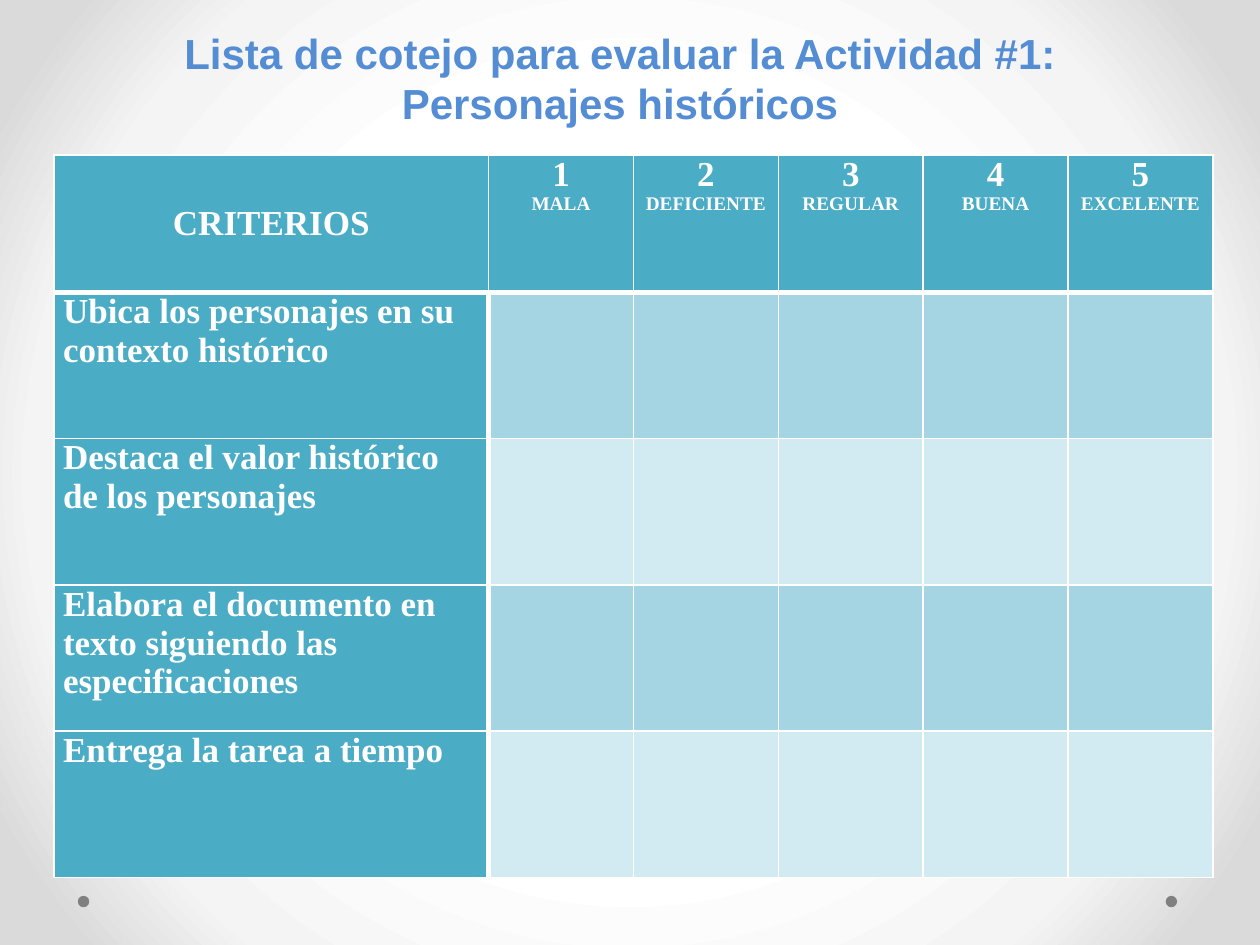
import pptx
import pptx.util
import pptx.dml.color
import pptx.enum.shapes
import pptx.enum.text
import pptx.oxml
import pptx.oxml.ns
from lxml import etree

Cm = pptx.util.Cm
RGBColor = pptx.dml.color.RGBColor
Align = pptx.enum.text.PP_ALIGN
Anchor = pptx.enum.text.MSO_ANCHOR
qn = pptx.oxml.ns.qn

HEADING = "Lista de cotejo para evaluar la Actividad #1: Personajes históricos"
CRITERIA_LABEL = "CRITERIOS"
RATINGS = ["MALA", "DEFICIENTE", "REGULAR", "BUENA", "EXCELENTE"]
CRITERIA = [
    "Ubica los personajes en su contexto histórico",
    "Destaca el valor histórico de los personajes",
    "Elabora el documento en texto siguiendo las especificaciones",
    "Entrega la tarea a tiempo",
]

WHITE = RGBColor(0xFF, 0xFF, 0xFF)
HEADING_BLUE = RGBColor(0x54, 0x8D, 0xD4)
TEAL = RGBColor(0x4B, 0xAC, 0xC6)
BANDS = [RGBColor(0xA5, 0xD5, 0xE2), RGBColor(0xD2, 0xEA, 0xF1)]
DOT_GREY = RGBColor(0x80, 0x80, 0x80)
BACKDROP = [
    (50, WHITE),
    (76, RGBColor(0xF4, 0xF4, 0xF4)),
    (92, RGBColor(0xDA, 0xDA, 0xDA)),
]

CRITERIA_WIDTH, RATING_WIDTH = 8.76, 2.92
HEADER_HEIGHT, CRITERION_HEIGHT = 2.77, 2.95
DOT_SIZE, DOT_TOP, DOT_LEFTS = 0.23, 18.06, (1.57, 23.5)


def write(paragraph, text, size=20, font="Times New Roman", color=WHITE, align=Align.LEFT):
    paragraph.alignment = align
    run = paragraph.add_run()
    run.text = text
    run.font.size = pptx.util.Pt(size)
    run.font.name = font
    run.font.bold = True
    run.font.color.rgb = color


def paint_backdrop(slide):
    slide.background.fill.gradient()
    gradient = next(slide.element.iter(qn("a:gradFill")))
    for child in list(gradient):
        gradient.remove(child)
    stops = etree.SubElement(gradient, qn("a:gsLst"))
    for position, color in BACKDROP:
        stop = etree.SubElement(stops, qn("a:gs"), pos=str(position * 1000))
        etree.SubElement(stop, qn("a:srgbClr"), val=str(color))
    circle = etree.SubElement(gradient, qn("a:path"), path="circle")
    etree.SubElement(circle, qn("a:fillToRect"), l="50000", t="50000", r="50000", b="50000")


def style_cell(cell, row, column):
    widths = {
        "a:lnL": 3 if row > 0 and column == 1 else 1,
        "a:lnR": 3 if row > 0 and column == 0 else 1,
        "a:lnT": 3 if row == 1 else 1,
        "a:lnB": 3 if row == 0 else 1,
    }
    cell.margin_left = cell.margin_right = Cm(0.18)
    cell.margin_top = cell.margin_bottom = 0
    properties = cell._tc.get_or_add_tcPr()
    for side, width in widths.items():
        line = etree.SubElement(properties, qn(side), w=str(pptx.util.Pt(width)))
        fill = etree.SubElement(line, qn("a:solidFill"))
        etree.SubElement(fill, qn("a:srgbClr"), val=str(WHITE))
    cell.fill.solid()
    labelled = row == 0 or column == 0
    cell.fill.fore_color.rgb = TEAL if labelled else BANDS[(row - 1) % 2]


def add_checklist(slide):
    rows, columns = len(CRITERIA) + 1, len(RATINGS) + 1
    width = CRITERIA_WIDTH + RATING_WIDTH * len(RATINGS)
    height = HEADER_HEIGHT + CRITERION_HEIGHT * len(CRITERIA)
    checklist = slide.shapes.add_table(
        rows, columns, Cm(1.09), Cm(3.12), Cm(width), Cm(height)).table
    checklist.first_row = checklist.horz_banding = False
    for index, column in enumerate(checklist.columns):
        column.width = Cm(RATING_WIDTH if index else CRITERIA_WIDTH)
    for index, row in enumerate(checklist.rows):
        row.height = Cm(CRITERION_HEIGHT if index else HEADER_HEIGHT)
    for row in range(rows):
        for column in range(columns):
            style_cell(checklist.cell(row, column), row, column)

    corner = checklist.cell(0, 0)
    corner.vertical_anchor = Anchor.MIDDLE
    write(corner.text_frame.paragraphs[0], CRITERIA_LABEL, align=Align.CENTER)
    for score, rating in enumerate(RATINGS, 1):
        frame = checklist.cell(0, score).text_frame
        write(frame.paragraphs[0], str(score), align=Align.CENTER)
        write(frame.add_paragraph(), rating, size=11, align=Align.CENTER)
    for row, criterion in enumerate(CRITERIA, 1):
        write(checklist.cell(row, 0).text_frame.paragraphs[0], criterion)


def main():
    deck = pptx.Presentation()
    deck.slide_width, deck.slide_height = Cm(25.4), Cm(19.05)
    slide = deck.slides.add_slide(deck.slide_layouts[6])
    paint_backdrop(slide)

    for left in DOT_LEFTS:
        dot = slide.shapes.add_shape(
            pptx.enum.shapes.MSO_SHAPE.OVAL,
            Cm(left), Cm(DOT_TOP), Cm(DOT_SIZE), Cm(DOT_SIZE))
        dot.shadow.inherit = False
        dot.fill.solid()
        dot.fill.fore_color.rgb = DOT_GREY
        dot.line.fill.background()

    add_checklist(slide)

    heading = slide.shapes.add_textbox(Cm(1.3), Cm(0.41), Cm(22.4), Cm(2.31)).text_frame
    heading.word_wrap = True
    heading.auto_size = pptx.enum.text.MSO_AUTO_SIZE.SHAPE_TO_FIT_TEXT
    heading.vertical_anchor = Anchor.MIDDLE
    write(heading.paragraphs[0], HEADING, size=24, font="Arial",
          color=HEADING_BLUE, align=Align.CENTER)

    deck.save("out.pptx")


if __name__ == "__main__":
    main()
